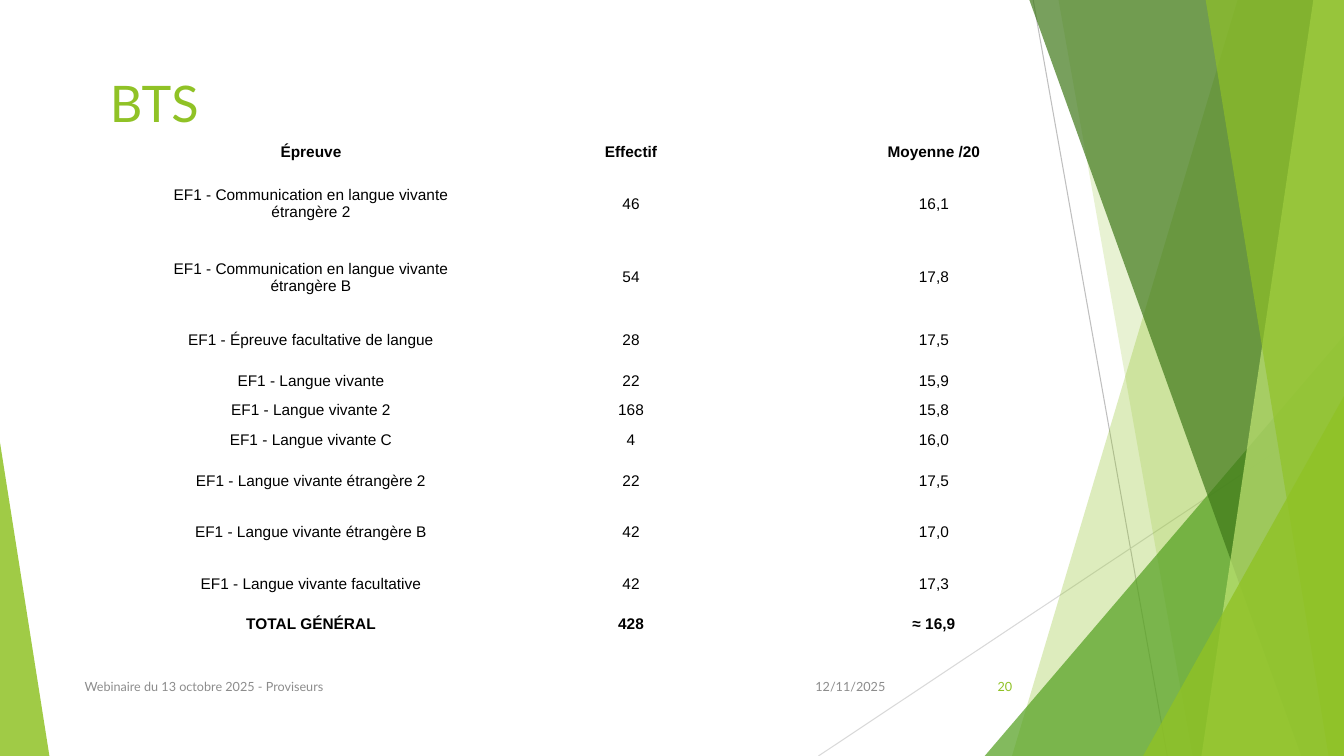
from pptx import Presentation
from pptx.dml.color import RGBColor
from pptx.enum.shapes import MSO_CONNECTOR, MSO_SHAPE
from pptx.enum.text import MSO_ANCHOR, PP_ALIGN
from pptx.oxml.ns import qn
from pptx.util import Pt
from lxml.etree import SubElement

HUES = {"lime": "90C226", "leaf": "54A021", "moss": "3F7819", "pale": "C0E474",
        "gray": "8C8C8C", "rule": "BFBFBF", "mist": "D9D9D9", "black": "000000"}
WIDE, HIGH, TOP = 960, 540, -0.6


def write(frame, text, size=9, font="Lato", hue="gray", bold=False,
          align=PP_ALIGN.LEFT, anchor=MSO_ANCHOR.MIDDLE):
    frame.word_wrap = True
    frame.vertical_anchor = anchor
    para = frame.paragraphs[0]
    para.alignment = align
    run = para.add_run()
    run.text = text
    run.font.size = Pt(size)
    run.font.name = font
    run.font.bold = bold
    run.font.color.rgb = RGBColor.from_string(HUES[hue])


def paint(shape, hue, alpha):
    shape.shadow.inherit = False
    shape.line.fill.background()
    shape.fill.solid()
    shape.fill.fore_color.rgb = RGBColor.from_string(HUES[hue])
    color = shape.fill._xPr.find(".//" + qn("a:srgbClr"))
    SubElement(color, qn("a:alpha")).set("val", str(alpha * 1000))


deck = Presentation()
deck.slide_width, deck.slide_height = Pt(WIDE), Pt(HIGH)
slide = deck.slides.add_slide(deck.slide_layouts[5])
shapes = slide.shapes

for ends, hue in [((738, 0, 833.8, HIGH), "rule"), ((WIDE, 290.2, 584.6, HIGH), "mist")]:
    line = shapes.add_connector(MSO_CONNECTOR.STRAIGHT, *map(Pt, ends))
    line.line.color.rgb = RGBColor.from_string(HUES[hue])
    line.line.width = Pt(0.75)
    SubElement(line._element.spPr, qn("a:effectLst"))

bands = [
    ("free", (884.2, 722.9), "lime", 30),
    ("free", (756, 851.8), "lime", 20),
    ("tri", (703.4, 239.8, 256.6, 300.2, 1), "leaf", 72),
    ("free", (735.1, 929.5), "moss", 70),
    ("free", (938.2, 858.2), "pale", 70),
    ("free", (861.1, 949), "lime", 65),
    ("tri", (816.5, 283, 143.5, 257, 1), "lime", 80),
    ("tri", (0, 316.1, 35.3, 223.9, 0), "lime", 85),
]
for kind, spots, hue, alpha in bands:
    if kind == "free":
        head, foot = spots
        pen = shapes.build_freeform(Pt(head), Pt(TOP))
        pen.add_line_segments([(Pt(WIDE), Pt(TOP)), (Pt(WIDE), Pt(HIGH)), (Pt(foot), Pt(HIGH))])
        band = pen.convert_to_shape()
    else:
        *box, peak = spots
        band = shapes.add_shape(MSO_SHAPE.ISOSCELES_TRIANGLE, *map(Pt, box))
        band.adjustments[0] = peak
    paint(band, hue, alpha)

title = shapes.title
title.left, title.top, title.width, title.height = map(Pt, (71.3, 48.2, 658.8, 68.4))
write(title.text_frame, "BTS", size=36, hue="lime", anchor=MSO_ANCHOR.TOP)

LOW, MID, TALL = 21.2, 36.8, 52.8
rows = [
    (LOW, "Épreuve", "Effectif", "Moyenne /20"),
    (TALL, "EF1 - Communication en langue vivante étrangère 2", "46", "16,1"),
    (TALL, "EF1 - Communication en langue vivante étrangère B", "54", "17,8"),
    (MID, "EF1 - Épreuve facultative de langue", "28", "17,5"),
    (LOW, "EF1 - Langue vivante", "22", "15,9"),
    (LOW, "EF1 - Langue vivante 2", "168", "15,8"),
    (LOW, "EF1 - Langue vivante C", "4", "16,0"),
    (MID, "EF1 - Langue vivante étrangère 2", "22", "17,5"),
    (MID, "EF1 - Langue vivante étrangère B", "42", "17,0"),
    (MID, "EF1 - Langue vivante facultative", "42", "17,3"),
    (LOW, "TOTAL GÉNÉRAL", "428", "≈ 16,9"),
]
cols = [252.7, 204.5, 228.2]
tall = sum(row[0] for row in rows)
grid = shapes.add_table(len(rows), len(cols), Pt(95.8), Pt(97.9), Pt(sum(cols)), Pt(tall)).table
grid.first_row = grid.horz_banding = False
grid._tbl.tblPr.find(qn("a:tableStyleId")).text = "{2D5ABB26-0587-4C30-8999-92F81FD0307C}"
for col, width in zip(grid.columns, cols):
    col.width = Pt(width)
for i, (height, *texts) in enumerate(rows):
    grid.rows[i].height = Pt(height)
    for j, text in enumerate(texts):
        cell = grid.cell(i, j)
        cell.fill.background()
        cell.margin_left = cell.margin_right = Pt(4.3)
        cell.margin_top = cell.margin_bottom = Pt(2.2)
        cell.vertical_anchor = MSO_ANCHOR.MIDDLE
        write(cell.text_frame, text, size=11, font="Arial", hue="black",
              bold=i in (0, len(rows) - 1), align=PP_ALIGN.CENTER, anchor=None)

notes = [
    (567.4, 72, "12/11/2025", "gray", PP_ALIGN.RIGHT),
    (53.3, 496.1, "Webinaire du 13 octobre 2025 - Proviseurs", "gray", PP_ALIGN.LEFT),
    (676.1, 54, "20", "lime", PP_ALIGN.RIGHT),
]
for left, width, text, hue, align in notes:
    box = shapes.add_textbox(Pt(left), Pt(475.9), Pt(width), Pt(28.8))
    write(box.text_frame, text, hue=hue, align=align)

deck.save("out.pptx")
